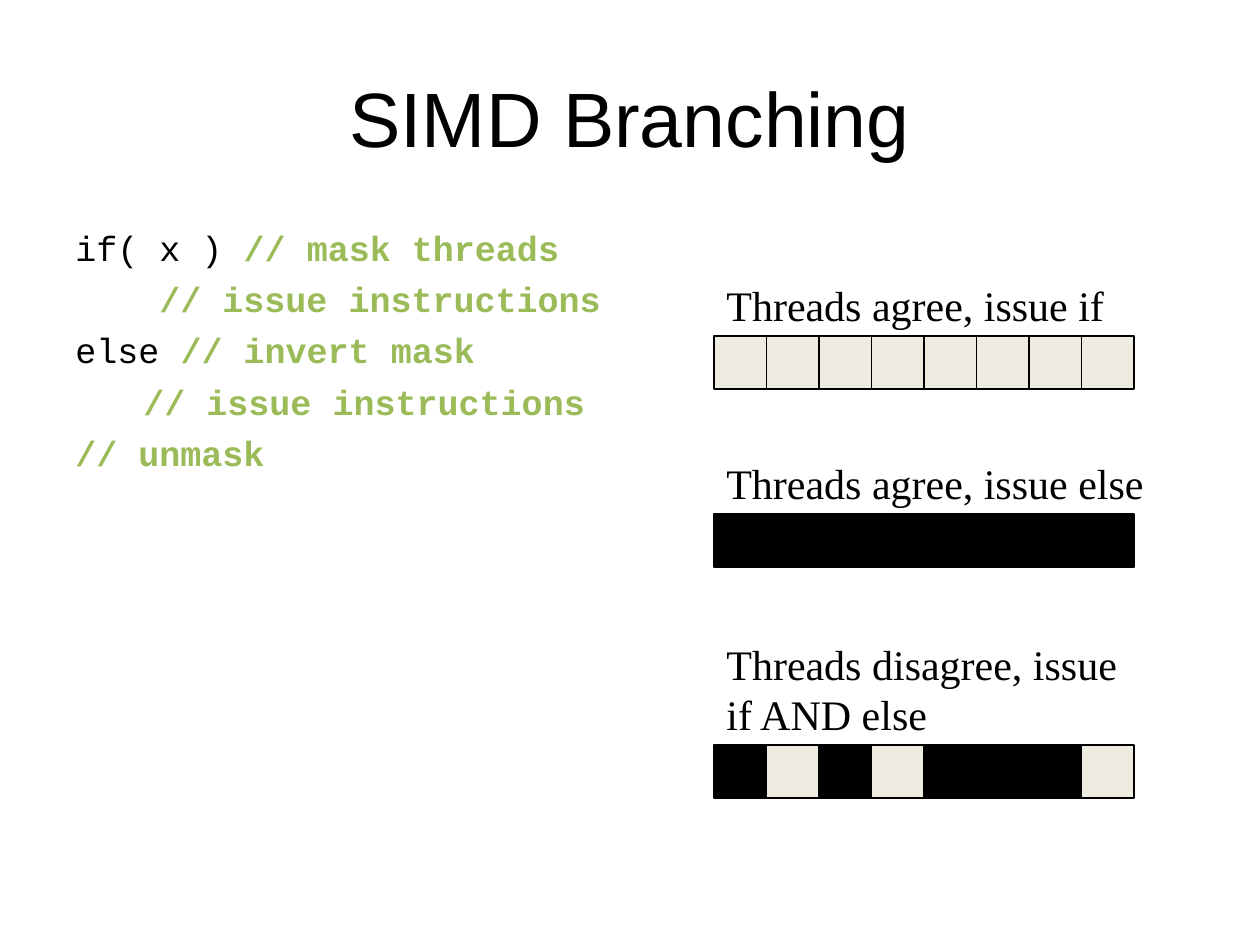
import pptx
import pptx.dml.color
import pptx.enum.shapes
import pptx.enum.text
import pptx.util

PX = 914400 / 126
BLACK, CREAM, GREEN = "000000", "EEECE1", "9BBB59"
CODE = [
    (0, "if( x ) ", "// mask threads"),
    (84, "", "// issue instructions"),
    (0, "else ", "// invert mask"),
    (68, "", "// issue instructions"),
    (0, "", "// unmask"),
]
CASES = [
    ((714, 273, 420, 63), "Threads agree, issue if", "11111111"),
    ((714, 451, 494, 63), "Threads agree, issue else", "00000000"),
    ((714, 632, 420, 113), "Threads disagree, issue if AND else", "01010001"),
]


def emu(px):
    """Turn px into EMU."""
    return pptx.util.Emu(round(px * PX))


def color(hex_value):
    """Turn a hex string into a colour."""
    return pptx.dml.color.RGBColor.from_string(hex_value)


def set_font(font, name, size):
    """Set a black font of the given name and size."""
    font.name = name
    font.size = pptx.util.Pt(size)
    font.color.rgb = color(BLACK)


def add_frame(slide, box):
    """Add a wrapping text box and return its text frame."""
    frame = slide.shapes.add_textbox(*map(emu, box)).text_frame
    frame.word_wrap = True
    return frame


def add_title(slide, box, text):
    """Place the centred slide title."""
    frame = add_frame(slide, box)
    frame.vertical_anchor = pptx.enum.text.MSO_ANCHOR.MIDDLE
    title = frame.paragraphs[0]
    title.text = text
    title.alignment = pptx.enum.text.PP_ALIGN.CENTER
    set_font(title.font, "Arial", 44)


def add_code(slide, box, lines):
    """Place the code listing with highlighted comments."""
    frame = add_frame(slide, box)
    for number, (indent, statement, comment) in enumerate(lines):
        line = frame.add_paragraph() if number else frame.paragraphs[0]
        line.space_before = pptx.util.Pt(5.3)
        line._p.get_or_add_pPr().set("marL", str(emu(indent)))
        set_font(line.font, "Courier New", 20)
        if statement:
            line.add_run().text = statement
        remark = line.add_run()
        remark.text = comment
        remark.font.bold = True
        remark.font.color.rgb = color(GREEN)


def add_lanes(slide, box, mask):
    """Place a row of thread lanes, light where the mask is 1."""
    left, top, width, height = box
    lane_width = width / len(mask)
    group = slide.shapes.add_group_shape()
    for number, bit in enumerate(mask):
        lane = group.shapes.add_shape(
            pptx.enum.shapes.MSO_SHAPE.RECTANGLE,
            *map(emu, (left + number * lane_width, top, lane_width, height)))
        lane.shadow.inherit = False
        lane.fill.solid()
        lane.fill.fore_color.rgb = color(CREAM if bit == "1" else BLACK)
        lane.line.color.rgb = color(BLACK)
        lane.line.width = pptx.util.Pt(0.75)


def add_case(slide, box, text, mask):
    """Place a caption with its row of thread lanes below."""
    left, top, width, height = box
    caption = add_frame(slide, box).paragraphs[0]
    caption.text = text
    caption.space_before = pptx.util.Pt(2.5)
    set_font(caption.font, "Times New Roman", 24)
    add_lanes(slide, (left, top + height, 420, 53), mask)


def main():
    """Build and save the slide."""
    deck = pptx.Presentation()
    deck.slide_width, deck.slide_height = emu(1260), emu(945)
    slide = deck.slides.add_slide(deck.slide_layouts[6])
    add_title(slide, (63, 38, 1134, 157), "SIMD Branching")
    add_code(slide, (63, 220, 557, 624), CODE)
    for box, text, mask in CASES:
        add_case(slide, box, text, mask)
    deck.save("out.pptx")


if __name__ == "__main__":
    main()
